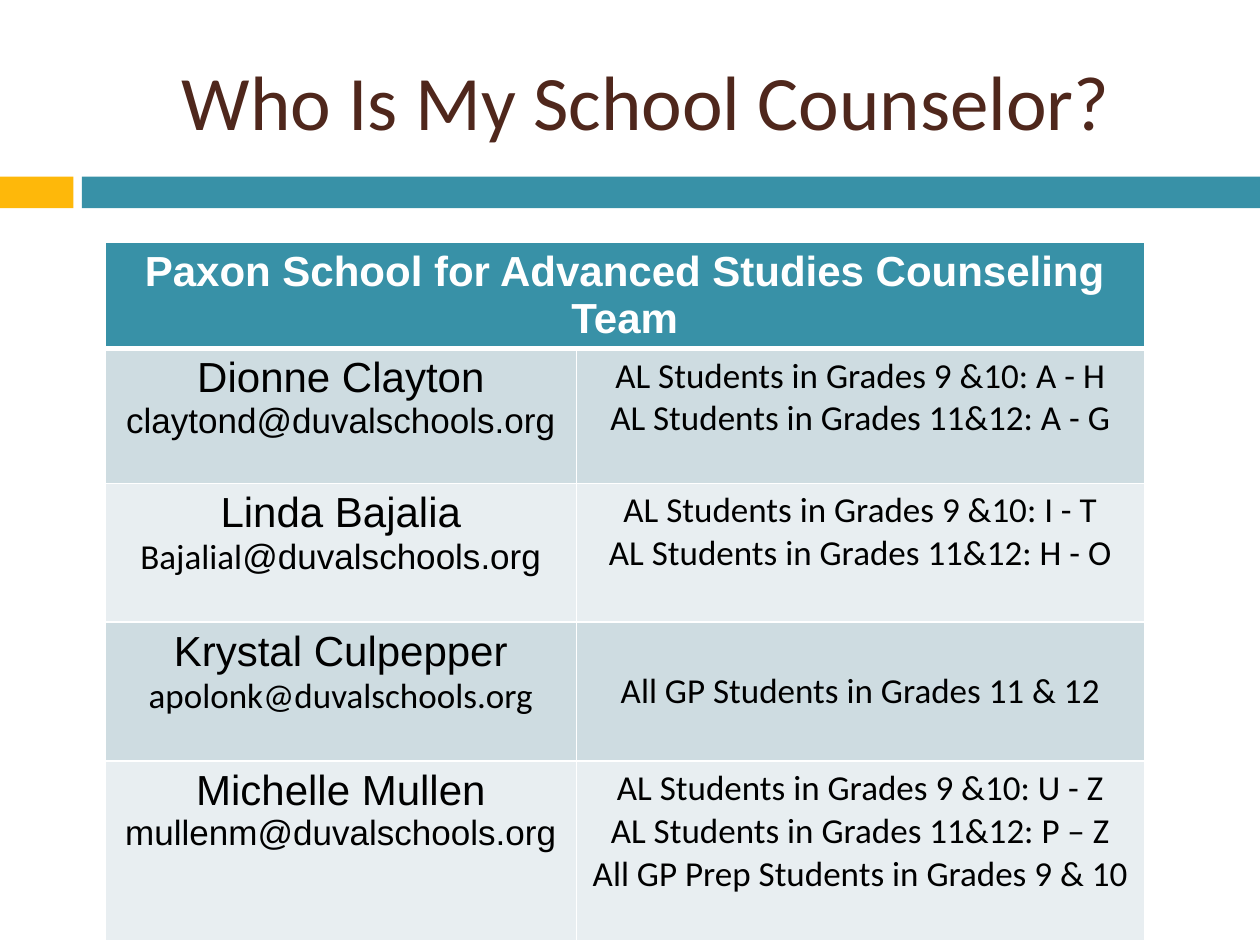
from lxml.etree import SubElement
from pptx import Presentation
from pptx.dml.color import RGBColor
from pptx.enum.shapes import MSO_SHAPE
from pptx.enum.text import MSO_ANCHOR, PP_ALIGN
from pptx.oxml.ns import qn
from pptx.util import Cm, Pt

COLORS = {
    "teal": "3891A7", "gold": "FEB80A", "brown": "4F271C", "white": "FFFFFF",
    "black": "000000", "band_dark": "CEDCE1", "band_light": "E8EEF1",
}
HEADING = "Paxon School for Advanced Studies Counseling Team"
DOMAIN = "@duvalschools.org"
COUNSELORS = [
    ("Dionne Clayton", [("claytond" + DOMAIN, "Arial")],
     ["AL Students in Grades 9 &10: A - H", "AL Students in Grades 11&12: A - G"]),
    ("Linda Bajalia", [("Bajalial", "Calibri"), (DOMAIN, "Arial")],
     ["AL Students in Grades 9 &10: I - T", "AL Students in Grades 11&12: H - O"]),
    ("Krystal Culpepper", [("apolonk" + DOMAIN, "Calibri")],
     ["All GP Students in Grades 11 & 12"]),
    ("Michelle Mullen", [("mullenm" + DOMAIN, "Arial")],
     ["AL Students in Grades 9 &10: U - Z", "AL Students in Grades 11&12: P – Z",
      "All GP Prep Students in Grades 9 & 10"]),
]
COL_WIDTHS = [9.5, 11.45]
ROW_HEIGHTS = [1.4, 2.72, 2.8, 2.8, 3.63]


def rgb(name):
    return RGBColor.from_string(COLORS[name])


def style(p, size, color, font=None, bold=False):
    p.alignment = PP_ALIGN.CENTER
    f = p.font
    f.size, f.bold, f.color.rgb = Pt(size), bold, rgb(color)
    if font:
        f.name = font


def add_title(s, left, top, width, height):
    title = s.shapes.title
    title.left, title.top, title.width, title.height = map(Cm, (left, top, width, height))
    tf = title.text_frame
    tf.text = "Who Is My School Counselor?"
    tf.vertical_anchor = MSO_ANCHOR.MIDDLE
    style(tf.paragraphs[0], 44, "brown", "Calibri")


def add_divider(s, left, top, width, height):
    accent, gap = 1.48, 0.17
    bar_left = accent + gap
    for x, w, color in ((0, accent, "gold"), (bar_left, width - bar_left, "teal")):
        sp = s.shapes.add_shape(MSO_SHAPE.RECTANGLE, Cm(left + x), Cm(top), Cm(w), Cm(height))
        sp.shadow.inherit = False
        sp.fill.solid()
        sp.fill.fore_color.rgb = rgb(color)
        sp.line.fill.background()


def format_cell(cell, fill, bottom=1):
    tcPr = cell._tc.get_or_add_tcPr()
    for side, width in (("L", 1), ("R", 1), ("T", 1), ("B", bottom)):
        ln = SubElement(tcPr, qn(f"a:ln{side}"), w=str(Pt(width)))
        SubElement(SubElement(ln, qn("a:solidFill")), qn("a:srgbClr"), val=COLORS["white"])
    cell.fill.solid()
    cell.fill.fore_color.rgb = rgb(fill)


def fill_contact(cell, name, email):
    tf = cell.text_frame
    tf.text = name
    style(tf.paragraphs[0], 24, "black", "Arial")
    p = tf.add_paragraph()
    style(p, 20, "black", email[0][1] if len(email) == 1 else None)
    for text, font in email:
        r = p.add_run()
        r.text = text
        if len(email) > 1:
            r.font.name = font


def fill_students(cell, groups):
    cell.text_frame.text = "\n".join(groups)
    for p in cell.text_frame.paragraphs:
        style(p, 20, "black", "Calibri")
    if len(groups) == 1:
        cell.vertical_anchor = MSO_ANCHOR.MIDDLE


def add_counselor_table(s, left, top):
    table = s.shapes.add_table(len(ROW_HEIGHTS), len(COL_WIDTHS), Cm(left), Cm(top),
                               Cm(sum(COL_WIDTHS)), Cm(sum(ROW_HEIGHTS))).table
    for col, width in zip(table.columns, COL_WIDTHS):
        col.width = Cm(width)
    for row, height in zip(table.rows, ROW_HEIGHTS):
        row.height = Cm(height)

    head = table.cell(0, 0)
    head.merge(table.cell(0, 1))
    head.text = HEADING
    style(head.text_frame.paragraphs[0], 24, "white", "Arial", bold=True)
    for cell in table.rows[0].cells:
        format_cell(cell, "teal", bottom=3)

    for i, (name, email, groups) in enumerate(COUNSELORS, 1):
        contact, students = table.rows[i].cells
        fill_contact(contact, name, email)
        fill_students(students, groups)
        for cell in (contact, students):
            format_cell(cell, "band_dark" if i % 2 else "band_light")


def main():
    prs = Presentation()
    prs.slide_width, prs.slide_height = Cm(25.4), Cm(19.05)
    s = prs.slides.add_slide(prs.slide_layouts[5])
    add_divider(s, 0, 3.56, 25.4, 0.64)
    add_title(s, 1.7, 0.64, 22.66, 2.74)
    add_counselor_table(s, 2.12, 4.88)
    prs.save("out.pptx")


if __name__ == "__main__":
    main()
